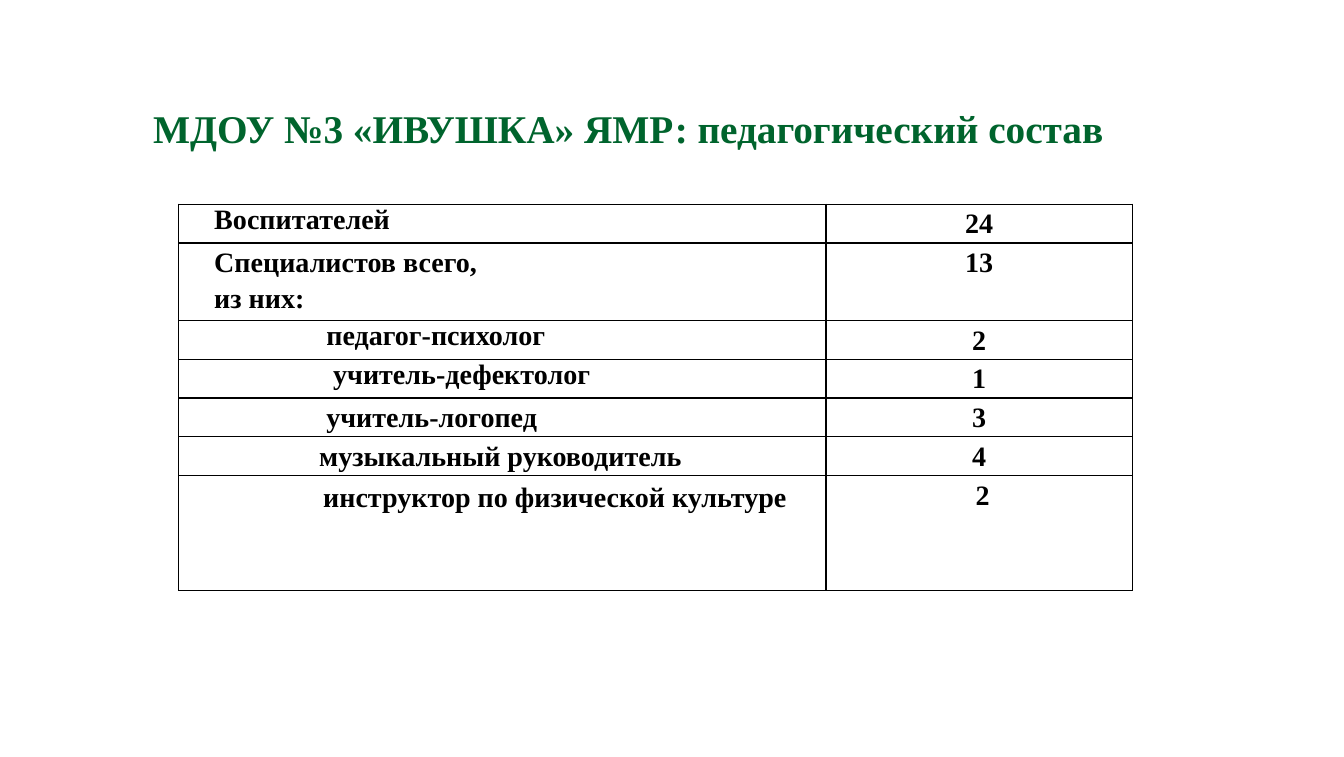
import pptx
import pptx.util
import pptx.dml.color
import pptx.enum.text
import pptx.oxml
import pptx.oxml.ns

Cm = pptx.util.Cm
Pt = pptx.util.Pt
ALIGN = pptx.enum.text.PP_ALIGN
GREEN = pptx.dml.color.RGBColor(0x00, 0x64, 0x2D)
BLACK = pptx.dml.color.RGBColor(0x00, 0x00, 0x00)


def write(frame, text, size=20, color=BLACK, align=ALIGN.LEFT, space=1.0):
    frame.word_wrap = True
    for i, line in enumerate(text.split("\n")):
        para = frame.add_paragraph() if i else frame.paragraphs[0]
        para.alignment = align
        para.line_spacing = space
        run = para.add_run()
        run.text = line
        run.font.name = "Times New Roman"
        run.font.size = Pt(size)
        run.font.bold = True
        run.font.color.rgb = color


def border(cell):
    props = cell._tc.get_or_add_tcPr()
    for side in ("lnL", "lnR", "lnT", "lnB"):
        props.append(pptx.oxml.parse_xml(
            f'<a:{side} {pptx.oxml.ns.nsdecls("a")} w="{Pt(1)}">'
            f'<a:solidFill><a:srgbClr val="{BLACK}"/></a:solidFill></a:{side}>'))


deck = pptx.Presentation()
deck.slide_width = Cm(33.81)
deck.slide_height = Cm(19.05)
slide = deck.slides.add_slide(deck.slide_layouts[6])

title = slide.shapes.add_textbox(Cm(1.9), Cm(2.51), Cm(27.81), Cm(1.45))
write(title.text_frame, "МДОУ №3 «ИВУШКА» ЯМР: педагогический состав",
      size=28, color=GREEN, align=ALIGN.CENTER)

PAD = 0.18
staff = [
    ("Воспитателей", "24", 0.71, 1.0, 0.97),
    ("Специалистов всего,\nиз них:", "13", 0.71, 1.15, 1.94),
    ("педагог-психолог", "2", 3.53, 1.0, 0.97),
    ("учитель-дефектолог", "1", 3.7, 1.0, 0.97),
    ("учитель-логопед", "3", 3.53, 1.15, 0.97),
    ("музыкальный руководитель", "4", 3.35, 1.15, 0.97),
    ("инструктор по физической культуре", "2", 3.45, 1.0, 2.9),
]
total = sum(item[-1] for item in staff)
table = slide.shapes.add_table(
    len(staff), 2, Cm(4.5), Cm(5.14), Cm(23.98), Cm(total)).table
table.first_row = False
table.horz_banding = False
table.columns[0].width = Cm(16.28)
table.columns[1].width = Cm(7.7)

for row, (role, count, indent, space, height) in zip(table.rows, staff):
    row.height = Cm(height)
    for cell in row.cells:
        cell.margin_left = cell.margin_right = Cm(PAD)
        cell.margin_top = cell.margin_bottom = 0
        border(cell)
        cell.fill.background()
    left, right = row.cells
    left.margin_left = Cm(PAD + indent)
    write(left.text_frame, role, space=space)
    write(right.text_frame, count, align=ALIGN.CENTER, space=1.15)

left.margin_top = Cm(0.18)
right.margin_left = Cm(2 * PAD)

deck.save("out.pptx")
